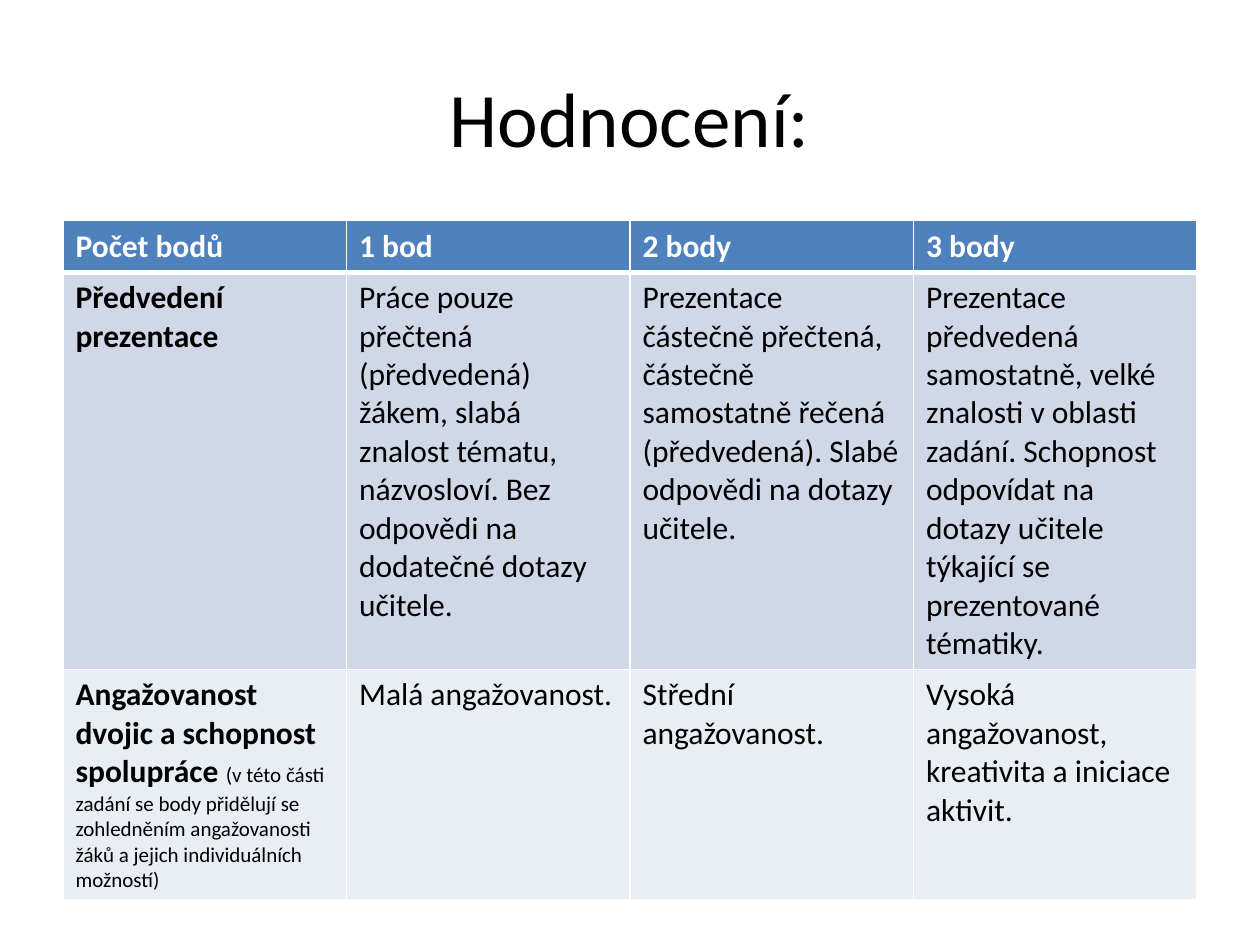
from lxml.etree import SubElement
from pptx import Presentation
from pptx.dml.color import RGBColor
from pptx.enum.text import MSO_ANCHOR, PP_ALIGN
from pptx.oxml.ns import qn
from pptx.util import Cm, Pt

FONT = "Calibri"
BLACK, WHITE = "000000", "FFFFFF"
FILLS = ["4F81BD", "D0D8E8", "E9EDF4"]  # header, then one per body row
ROW_HEIGHTS = [1.04, 7.9, 4.55]

# Each cell is a list of (text, size, bold) runs
HEADER = ["Počet bodů", "1 bod", "2 body", "3 body"]
CRITERIA = [
    ([("Předvedení prezentace", 18, True)],
     ["Práce pouze přečtená (předvedená) žákem, slabá znalost tématu, "
      "názvosloví. Bez odpovědi na dodatečné dotazy učitele.",
      "Prezentace částečně přečtená, částečně samostatně řečená "
      "(předvedená). Slabé odpovědi na dotazy učitele.",
      "Prezentace předvedená samostatně, velké znalosti v oblasti zadání. "
      "Schopnost odpovídat na dotazy učitele týkající se prezentované "
      "tématiky."]),
    ([("Angažovanost dvojic a schopnost spolupráce ", 18, True),
      ("(v této části zadání se body přidělují se zohledněním angažovanosti "
       "žáků a jejich individuálních možností)", 12, False)],
     ["Malá angažovanost.",
      "Střední angažovanost.",
      "Vysoká angažovanost, kreativita a iniciace aktivit."]),
]
ROWS = [[[(text, 18, True)] for text in HEADER]] + [
    [label] + [[(text, 18, False)] for text in levels]
    for label, levels in CRITERIA
]


def rgb(value):
    return RGBColor.from_string(value)


def add_run(p, text, size, color, bold=False):
    r = p.add_run()
    r.text = text
    r.font.name = FONT
    r.font.size = Pt(size)
    r.font.bold = bold
    r.font.color.rgb = rgb(color)


def set_borders(cell, color, widths):
    """Draw the borders of a cell; widths are points by side, in schema order."""
    tcPr = cell._tc.get_or_add_tcPr()
    for i, (side, width) in enumerate(widths.items()):
        ln = SubElement(tcPr, qn(f"a:ln{side}"), w=str(Pt(width)))
        fill = SubElement(ln, qn("a:solidFill"))
        SubElement(fill, qn("a:srgbClr"), val=color)
        tcPr.insert(i, ln)  # borders come before the fill


def add_title(s, left, top, width, height):
    sp = s.shapes.title
    sp.left, sp.top, sp.width, sp.height = map(Cm, (left, top, width, height))
    tf = sp.text_frame
    tf.vertical_anchor = MSO_ANCHOR.MIDDLE
    p = tf.paragraphs[0]
    p.alignment = PP_ALIGN.CENTER
    add_run(p, "Hodnocení:", 44, BLACK)


def add_rubric(s, left, top, width):
    table = s.shapes.add_table(
        len(ROWS), len(HEADER), Cm(left), Cm(top), Cm(width),
        Cm(sum(ROW_HEIGHTS))).table
    for i, (row, height) in enumerate(zip(ROWS, ROW_HEIGHTS)):
        table.rows[i].height = Cm(height)
        for j, runs in enumerate(row):
            cell = table.cell(i, j)
            cell.fill.solid()
            cell.fill.fore_color.rgb = rgb(FILLS[i])
            # A thick rule separates the header from the body
            set_borders(cell, WHITE, {"L": 1, "R": 1,
                                      "T": 3 if i == 1 else 1,
                                      "B": 3 if i == 0 else 1})
            p = cell.text_frame.paragraphs[0]
            for text, size, bold in runs:
                add_run(p, text, size, BLACK if i else WHITE, bold)


def main():
    prs = Presentation()
    prs.slide_width, prs.slide_height = Cm(25.4), Cm(19.05)
    s = prs.slides.add_slide(prs.slide_layouts[5])  # Title Only
    add_title(s, 1.27, 0.76, 22.86, 3.18)
    add_rubric(s, 1.27, 4.45, 22.86)
    prs.save("out.pptx")


if __name__ == "__main__":
    main()
